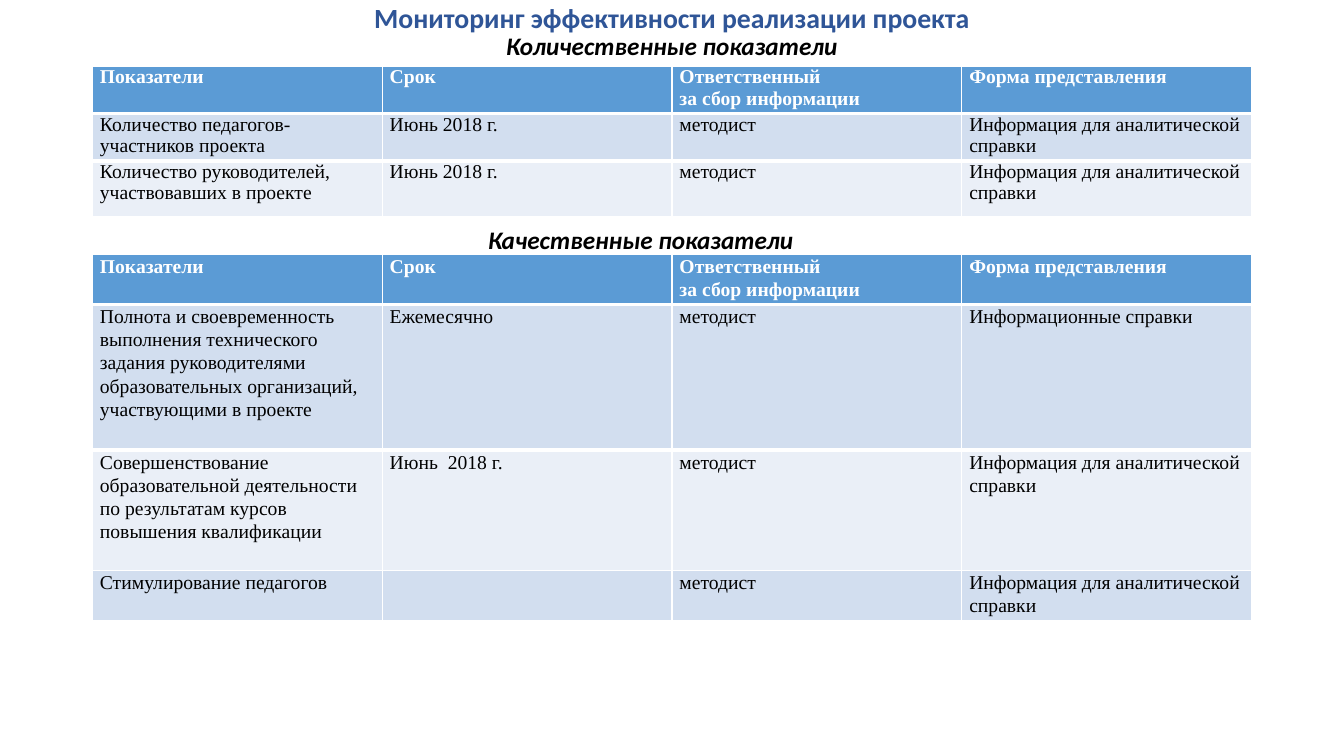
from dataclasses import dataclass

from lxml import etree
from pptx import Presentation
from pptx.dml.color import RGBColor
from pptx.enum.text import MSO_ANCHOR, PP_ALIGN
from pptx.oxml.ns import qn
from pptx.util import Pt

CENTER, LEFT = PP_ALIGN.CENTER, PP_ALIGN.LEFT
TOP = MSO_ANCHOR.TOP


@dataclass(frozen=True)
class Theme:
    title: RGBColor = RGBColor(0x2F, 0x55, 0x97)
    text: RGBColor = RGBColor(0, 0, 0)
    header_text: RGBColor = RGBColor(0xFF, 0xFF, 0xFF)
    header_fill: RGBColor = RGBColor(0x5B, 0x9B, 0xD5)
    header_rule: RGBColor = RGBColor(0xFF, 0xFF, 0xFF)
    band_fills: tuple = (RGBColor(0xD2, 0xDE, 0xEF), RGBColor(0xEA, 0xEF, 0xF7))
    heading_font: str = "Calibri"
    table_font: str = "Times New Roman"
    title_size: float = 19.8
    subtitle_size: float = 18
    table_size: float = 14


theme = Theme()

TABLE_LEFT, TABLE_WIDTH = 66, 828
HEADER_RULE_WIDTH = 3
HEADER = ("Показатели", "Срок", "Ответственный\nза сбор информации", "Форма представления")
REPORT = "Информация для аналитической справки"

# Each table: top, line spacing, row heights, rows below the header
tables = [
    (47.5, 1.0, (33, 33, 40), [
        ("Количество педагогов-участников проекта", "Июнь 2018 г.", "методист", REPORT),
        ("Количество руководителей, участвовавших в проекте", "Июнь 2018 г.", "методист", REPORT),
    ]),
    (181.5, 1.07, (36, 104, 86, 36), [
        ("Полнота и своевременность выполнения технического задания руководителями "
         "образовательных организаций, участвующими в проекте",
         "Ежемесячно", "методист", "Информационные справки"),
        ("Совершенствование образовательной деятельности по результатам курсов "
         "повышения квалификации", "Июнь  2018 г.", "методист", REPORT),
        ("Стимулирование педагогов", "", "методист", REPORT),
    ]),
]

# Each heading box: left, top, width, height, alignment, line spacing,
# and its lines as text, size, colour, italic
headings = [
    (66, -0.5, 828, 48, CENTER, 0.9, [
        ("Мониторинг эффективности реализации проекта", theme.title_size, theme.title, False),
        ("Количественные показатели", theme.subtitle_size, theme.text, True),
    ]),
    (341.5, 156.5, 480, 30, LEFT, 1.0, [
        ("Качественные показатели", theme.subtitle_size, theme.text, True),
    ]),
]


def style(paragraph, name, size, color, bold, italic=False):
    font = paragraph.font
    font.name, font.size = name, Pt(size)
    font.bold, font.italic = bold, italic
    font.color.rgb = color


def add_header_rule(cell, side):
    """Draw the thick rule under the header on one side of a cell: lnT or lnB."""
    line = etree.Element(qn(f"a:{side}"), w=str(Pt(HEADER_RULE_WIDTH)))
    fill = etree.SubElement(line, qn("a:solidFill"))
    etree.SubElement(fill, qn("a:srgbClr"), val=str(theme.header_rule))
    cell._tc.get_or_add_tcPr().insert(0, line)


presentation = Presentation()
presentation.slide_width, presentation.slide_height = Pt(960), Pt(540)
slide = presentation.slides.add_slide(presentation.slide_layouts[6])

for left, top, width, height, alignment, spacing, lines in headings:
    box = slide.shapes.add_textbox(Pt(left), Pt(top), Pt(width), Pt(height))
    frame = box.text_frame
    frame.word_wrap = True
    frame.vertical_anchor = TOP
    frame.text = "\n".join(line[0] for line in lines)
    for paragraph, (_, size, color, italic) in zip(frame.paragraphs, lines):
        paragraph.alignment = alignment
        paragraph.line_spacing = spacing
        style(paragraph, theme.heading_font, size, color, True, italic)

for top, spacing, row_heights, body in tables:
    rows = [HEADER, *body]
    table = slide.shapes.add_table(
        len(rows), len(HEADER), Pt(TABLE_LEFT), Pt(top), Pt(TABLE_WIDTH), Pt(sum(row_heights))
    ).table
    for row_index, (texts, row_height) in enumerate(zip(rows, row_heights)):
        is_header = row_index == 0
        table.rows[row_index].height = Pt(row_height)
        for column_index, text in enumerate(texts):
            cell = table.cell(row_index, column_index)
            cell.margin_left = cell.margin_right = Pt(5.4)
            cell.margin_top = cell.margin_bottom = Pt(0)
            cell.fill.solid()
            cell.fill.fore_color.rgb = (
                theme.header_fill if is_header else theme.band_fills[(row_index - 1) % 2]
            )
            if row_index < 2:
                add_header_rule(cell, "lnB" if is_header else "lnT")
            cell.text_frame.text = text
            for paragraph in cell.text_frame.paragraphs:
                paragraph.line_spacing = spacing
                color = theme.header_text if is_header else theme.text
                style(paragraph, theme.table_font, theme.table_size, color, is_header)

presentation.save("out.pptx")
